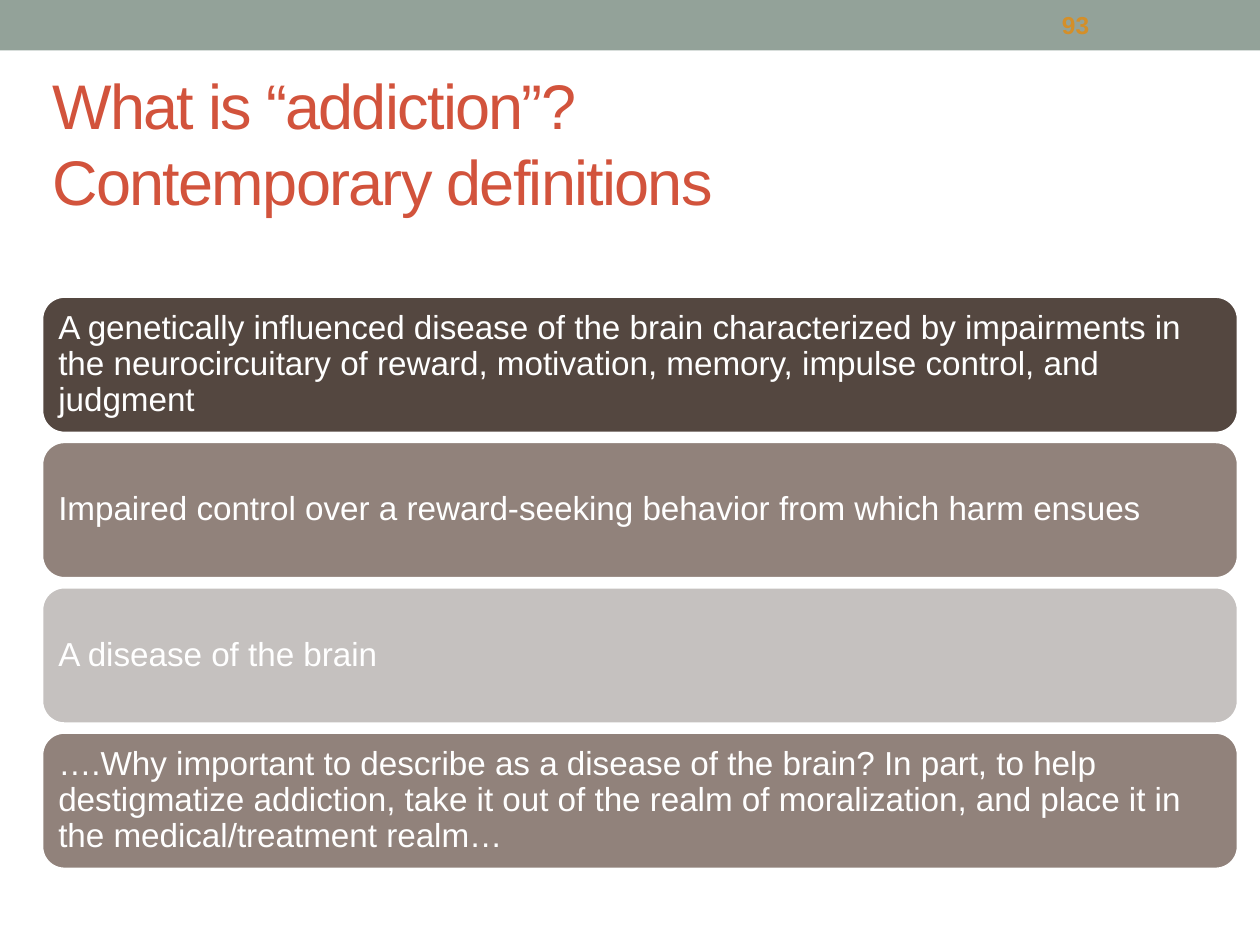
from pptx import Presentation
from pptx.dml.color import RGBColor
from pptx.enum.shapes import MSO_SHAPE
from pptx.enum.text import MSO_ANCHOR, PP_ALIGN
from pptx.util import Inches, Pt

TITLE = "What is “addiction”?\vContemporary definitions"
PAGE_NUMBER = "93"
DEFINITIONS = [
    ("A genetically influenced disease of the brain characterized by impairments in "
     "the neurocircuitary of reward, motivation, memory, impulse control, and judgment",
     "544740"),
    ("Impaired control over a reward-seeking behavior from which harm ensues", "91827B"),
    ("A disease of the brain", "C5C1BF"),
    ("….Why important to describe as a disease of the brain? In part, to help "
     "destigmatize addiction, take it out of the realm of moralization, and place it in "
     "the medical/treatment realm…", "91827B"),
]
TITLE_FONT = {"size": Pt(36), "name": "Arial"}
NUMBER_FONT = {"size": Pt(14), "name": "Arial", "bold": True}
CARD_FONT = {"size": Pt(19), "name": "Arial"}
CARD_LEFT, CARD_WIDTH, CARD_HEIGHT = 0.33, 9.5, 1.09
FIRST_TOP, LAST_TOP = 2.35, 5.81
CARD_INSET = Inches(0.08)


def color(hex_code):
    return RGBColor.from_string(hex_code)


def add_block(slide, preset, box, fill):
    block = slide.shapes.add_shape(preset, *map(Inches, box))
    block.shadow.inherit = False
    block.fill.solid()
    block.fill.fore_color.rgb = color(fill)
    block.line.fill.background()
    return block


def write(holder, text, font, hex_code):
    """Fill a shape or text box with one left-aligned, middle-anchored paragraph."""
    frame = holder.text_frame
    frame.word_wrap = True
    frame.vertical_anchor = MSO_ANCHOR.MIDDLE
    paragraph = frame.paragraphs[0]
    paragraph.text = text
    paragraph.alignment = PP_ALIGN.LEFT
    for run in paragraph.runs:
        for key, value in font.items():
            setattr(run.font, key, value)
        run.font.color.rgb = color(hex_code)
    return paragraph


def add_card(slide, top, text, fill):
    card = add_block(slide, MSO_SHAPE.ROUNDED_RECTANGLE,
                     (CARD_LEFT, top, CARD_WIDTH, CARD_HEIGHT), fill)
    card.line.color.rgb = color("FFFFFF")
    card.line.width = Pt(2.08)
    for side in ("left", "top", "right", "bottom"):
        setattr(card.text_frame, f"margin_{side}", CARD_INSET)
    paragraph = write(card, text, CARD_FONT, "FFFFFF")
    paragraph.line_spacing = 0.9
    paragraph.space_after = Pt(6.65)


def main():
    deck = Presentation()
    deck.slide_width, deck.slide_height = Inches(10), Inches(7.5)
    slide = deck.slides.add_slide(deck.slide_layouts[6])

    add_block(slide, MSO_SHAPE.RECTANGLE, (0, 0, 10, 0.4), "93A299")

    title = slide.shapes.add_textbox(*map(Inches, (0.32, 0.67, 9.5, 0.92)))
    for run in write(title, TITLE, TITLE_FONT, "D2533C").runs:
        run.font._element.set("spc", "-100")

    pitch = (LAST_TOP - FIRST_TOP) / (len(DEFINITIONS) - 1)
    for index, (definition, fill) in enumerate(DEFINITIONS):
        add_card(slide, FIRST_TOP + index * pitch, definition, fill)

    number = slide.shapes.add_textbox(*map(Inches, (8.33, 0.02, 1.17, 0.36)))
    write(number, PAGE_NUMBER, NUMBER_FONT, "D48F29")

    deck.save("out.pptx")


if __name__ == "__main__":
    main()
